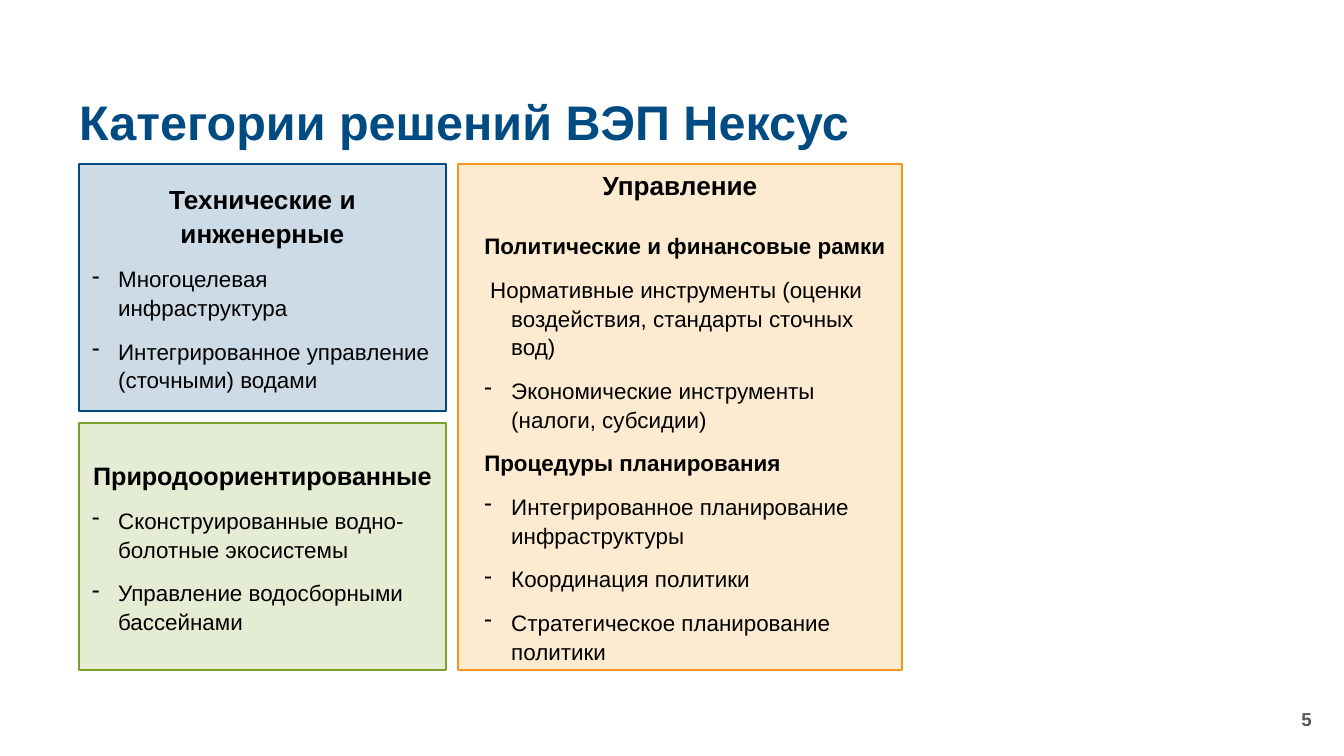
from lxml import etree
from pptx import Presentation
from pptx.dml.color import RGBColor
from pptx.enum.shapes import MSO_SHAPE
from pptx.enum.text import MSO_ANCHOR, PP_ALIGN
from pptx.oxml.ns import qn
from pptx.util import Pt

LEFT, CENTER, RIGHT = PP_ALIGN.LEFT, PP_ALIGN.CENTER, PP_ALIGN.RIGHT
RECT, MIDDLE = MSO_SHAPE.RECTANGLE, MSO_ANCHOR.MIDDLE
EMU_PER_PX = 914400 / 134.4
FONT = "Arial"
BLACK, NAVY, ORANGE, GREEN, GREY = "000000", "004C82", "F4971A", "79A12C", "575756"

TITLE = "Категории решений ВЭП Нексус"
PAGE_NUMBER = "5"
# Each paragraph is (style, text).
TECHNICAL = [
    ("heading", "Технические и инженерные"),
    ("bullet", "Многоцелевая инфраструктура"),
    ("bullet", "Интегрированное управление (сточными) водами"),
]
NATURE = [
    ("tight_heading", "Природоориентированные"),
    ("bullet", "Сконструированные водно-болотные экосистемы"),
    ("bullet", "Управление водосборными бассейнами"),
]
GOVERNANCE = [
    ("top_heading", "Управление"),
    ("subheading", "Политические и финансовые рамки"),
    ("hanging", "Нормативные инструменты (оценки воздействия, стандарты сточных вод)"),
    ("deep_bullet", "Экономические инструменты (налоги, субсидии)"),
    ("subheading", "Процедуры планирования"),
    ("deep_bullet", "Интегрированное планирование инфраструктуры"),
    ("deep_bullet", "Координация политики"),
    ("deep_bullet", "Стратегическое планирование политики"),
]

BODY = {"size": 12, "bold": False, "align": LEFT, "spacing": 1.07, "after": 8}
HEADING = {**BODY, "size": 14, "bold": True, "align": CENTER}
STYLES = {
    "heading": HEADING,
    "tight_heading": {**HEADING, "size": 13.5},
    "top_heading": {**HEADING, "spacing": 1.0, "after": 16},
    "subheading": {**BODY, "bold": True, "margin": 40, "indent": -27},
    "hanging": {**BODY, "margin": 40, "indent": -21},
    "bullet": {**BODY, "margin": 26, "indent": -26, "bullet": "-"},
    "deep_bullet": {**BODY, "margin": 40, "indent": -27, "bullet": "-"},
    "title": {"size": 26, "bold": True, "color": NAVY, "spacing": 0.9},
    "page": {"size": 10, "bold": True, "color": GREY, "align": RIGHT},
}

LEFT_X, TOP, GAP = 79, 164, 12
LEFT_W, RIGHT_W, CARD_H = 367, 444, 247
RIGHT_X = LEFT_X + LEFT_W + GAP
LOWER_Y = TOP + CARD_H + GAP
CARDS = [
    (RIGHT_X, TOP, RIGHT_W, 2 * CARD_H + GAP, ORANGE, GOVERNANCE),
    (LEFT_X, TOP, LEFT_W, CARD_H, NAVY, TECHNICAL),
    (LEFT_X, LOWER_Y, LEFT_W, CARD_H, GREEN, NATURE),
]


def px(n):
    return round(n * EMU_PER_PX)


def rgb(color):
    return RGBColor.from_string(color)


def write(shape, paragraphs):
    tf = shape.text_frame
    tf.word_wrap = True
    tf.vertical_anchor = MIDDLE
    for i, (name, text) in enumerate(paragraphs):
        style = STYLES[name]
        p = tf.paragraphs[0] if i == 0 else tf.add_paragraph()
        pPr = p._p.get_or_add_pPr()
        if "margin" in style:
            pPr.set("marL", str(px(style["margin"])))
            pPr.set("indent", str(px(style["indent"])))
        if "bullet" in style:
            etree.SubElement(pPr, qn("a:buChar"), char=style["bullet"])
        p.alignment = style.get("align", LEFT)
        p.line_spacing = style.get("spacing", 1.0)
        p.space_after = Pt(style.get("after", 0))
        r = p.add_run()
        r.text = text
        values = {"name": FONT, "size": Pt(style["size"]), "bold": style["bold"]}
        for key, value in values.items():
            setattr(r.font, key, value)
        r.font.color.rgb = rgb(style.get("color", BLACK))


def add_text(s, x, y, w, h, style, text):
    write(s.shapes.add_textbox(px(x), px(y), px(w), px(h)), [(style, text)])


def add_card(s, x, y, w, h, color, paragraphs):
    """Add a box with a solid outline and a 20 % tint of the same colour."""
    sp = s.shapes.add_shape(RECT, px(x), px(y), px(w), px(h))
    sp.shadow.inherit = False
    sp.fill.solid()
    sp.fill.fore_color.rgb = rgb(color)
    tint = sp._element.spPr.find(qn("a:solidFill")).find(qn("a:srgbClr"))
    etree.SubElement(tint, qn("a:alpha"), val="20000")
    sp.line.color.rgb = rgb(color)
    sp.line.width = Pt(1)
    write(sp, paragraphs)


def main():
    prs = Presentation()
    prs.slide_width, prs.slide_height = px(1344), px(756)
    s = prs.slides.add_slide(prs.slide_layouts[6])
    add_text(s, 66, 85, 1259, 79, "title", TITLE)
    add_text(s, 1023, 699, 302, 40, "page", PAGE_NUMBER)
    for card in CARDS:
        add_card(s, *card)
    prs.save("out.pptx")


if __name__ == "__main__":
    main()
